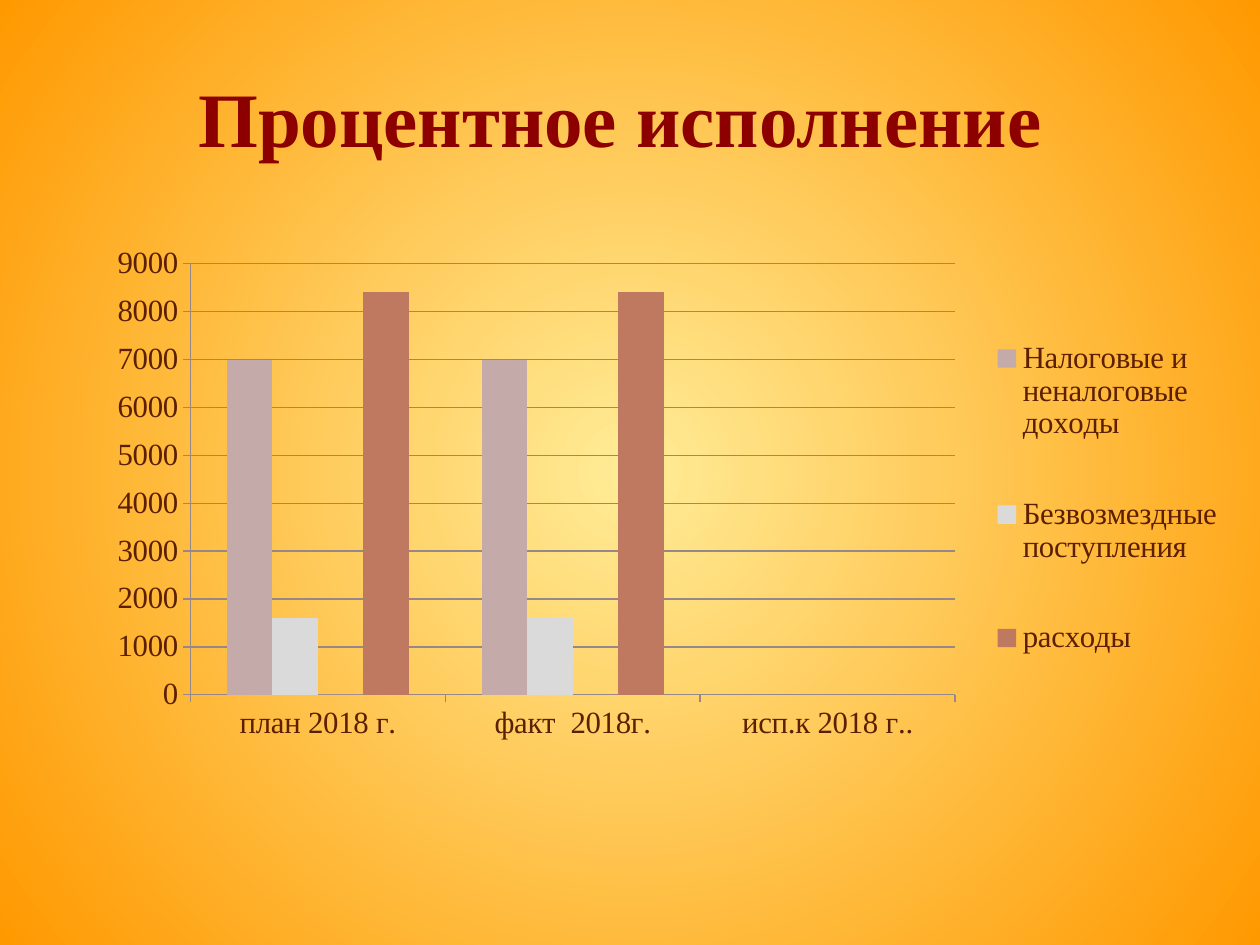
from lxml.etree import SubElement
from pptx import Presentation
from pptx.chart.data import CategoryChartData as ChartData
from pptx.dml.color import RGBColor as Color
from pptx.enum.chart import XL_CHART_TYPE as ChartType
from pptx.enum.chart import XL_LEGEND_POSITION as LegendSide
from pptx.enum.chart import XL_TICK_MARK as Tick
from pptx.enum.text import MSO_ANCHOR as Anchor
from pptx.enum.text import PP_ALIGN as Align
from pptx.oxml import parse_xml
from pptx.oxml.ns import nsdecls, qn
from pptx.util import Inches, Pt

COLORS = {
    "center": "FFEC97", "edge": "FF9900", "title": "8C0000",
    "text": "5C1F00", "line": "968888",
}
CATEGORIES = ["план 2018 г.", "факт  2018г.", "исп.к 2018 г.."]
SERIES = [  # name, values, colour
    ("Налоговые и неналоговые доходы", (7000, 7000, None), "C5AAAA"),
    ("Безвозмездные поступления", (1600, 1600, None), "DADADA"),
    ("Series 3", (0, None, None), "FFB9B0"),
    ("расходы", (8400, 8400, None), "BE7960"),
]
UNLISTED_SERIES = 2


def set_values(target, values):
    for name, value in values.items():
        setattr(target, name, value)


def manual_layout(x, y, w, h, inner=False):
    """Chart layout as fractions of the chart frame."""
    layout = parse_xml(f"<c:layout {nsdecls('c')}><c:manualLayout/></c:layout>")
    values = {"layoutTarget": "inner"} if inner else {}
    values |= {"xMode": "edge", "yMode": "edge", "x": x, "y": y, "w": w, "h": h}
    for name, value in values.items():
        SubElement(layout[0], qn(f"c:{name}")).set("val", str(value))
    return layout


class SlideBuilder:
    font = "Times New Roman"

    def __init__(self, deck):
        self.slide = deck.slides.add_slide(deck.slide_layouts[6])

    def style(self, font, size, color, bold=False):
        set_values(font, {"name": self.font, "size": Pt(size), "bold": bold})
        font.color.rgb = Color.from_string(COLORS[color])

    def background(self):
        fill = self.slide.background.fill
        fill.gradient()
        for stop, name in zip(fill.gradient_stops, ("center", "edge")):
            stop.color.rgb = Color.from_string(COLORS[name])
        gradient = self.slide.element.find(".//" + qn("a:gradFill"))
        gradient.replace(gradient.find(qn("a:lin")), parse_xml(
            f'<a:path {nsdecls("a")} path="circle"><a:fillToRect '
            'l="50000" t="50000" r="50000" b="50000"/></a:path>'))

    def title(self, text, left, top, width, height):
        box = self.slide.shapes.add_textbox(*map(Inches, (left, top, width, height)))
        set_values(box.text_frame, {"word_wrap": True, "vertical_anchor": Anchor.MIDDLE})
        para = box.text_frame.paragraphs[0]
        para.alignment = Align.CENTER
        span = para.add_run()
        span.text = text
        self.style(span.font, 44, "title", bold=True)

    def column_chart(self, left, top, width, height):
        data = ChartData()
        data.categories = CATEGORIES
        for name, values, _ in SERIES:
            data.add_series(name, values)
        frame = self.slide.shapes.add_chart(
            ChartType.COLUMN_CLUSTERED, *map(Inches, (left, top, width, height)), data)
        chart = frame.chart
        set_values(chart, {"has_title": False, "has_legend": True})
        self.style(chart.font, 17.6, "text")

        # Columns
        plot = chart.plots[0]
        set_values(plot, {"gap_width": 160, "overlap": 0, "vary_by_categories": False})
        for series, (_, _, color) in zip(plot.series, SERIES):
            series.format.fill.solid()
            series.format.fill.fore_color.rgb = Color.from_string(color)
        area = chart.element.find(".//" + qn("c:plotArea"))
        for old in area.findall(qn("c:layout")):
            area.remove(old)
        area.insert(0, manual_layout(0.1, 0.053, 0.659, 0.776, inner=True))

        # Axes and gridlines
        value_axis, category_axis = chart.value_axis, chart.category_axis
        set_values(value_axis, {"has_major_gridlines": True, "minimum_scale": 0,
                                "maximum_scale": 9000, "major_unit": 1000})
        for axis in (value_axis, category_axis):
            axis.major_tick_mark = Tick.OUTSIDE
        for part in (value_axis, category_axis, value_axis.major_gridlines):
            part.format.line.width = Pt(0.75)
            part.format.line.color.rgb = Color.from_string(COLORS["line"])

        # Legend without the unnamed series
        legend = chart.legend
        set_values(legend, {"position": LegendSide.RIGHT, "include_in_layout": False})
        element = chart.element.find(".//" + qn("c:legend"))
        for old in element.findall(qn("c:layout")):
            element.remove(old)
        side = element.find(qn("c:legendPos"))
        side.addnext(manual_layout(0.785, 0.09, 0.21, 0.77))
        side.addnext(parse_xml(
            f'<c:legendEntry {nsdecls("c")}><c:idx val="{UNLISTED_SERIES}"/>'
            '<c:delete val="1"/></c:legendEntry>'))


def main():
    deck = Presentation()
    set_values(deck, {"slide_width": Inches(10), "slide_height": Inches(7.5)})
    page = SlideBuilder(deck)
    page.background()
    page.title("Процентное исполнение ", 0.5, 0.3, 9, 1.25)
    page.column_chart(0.59, 1.86, 9.21, 4.41)
    deck.save("out.pptx")


if __name__ == "__main__":
    main()
